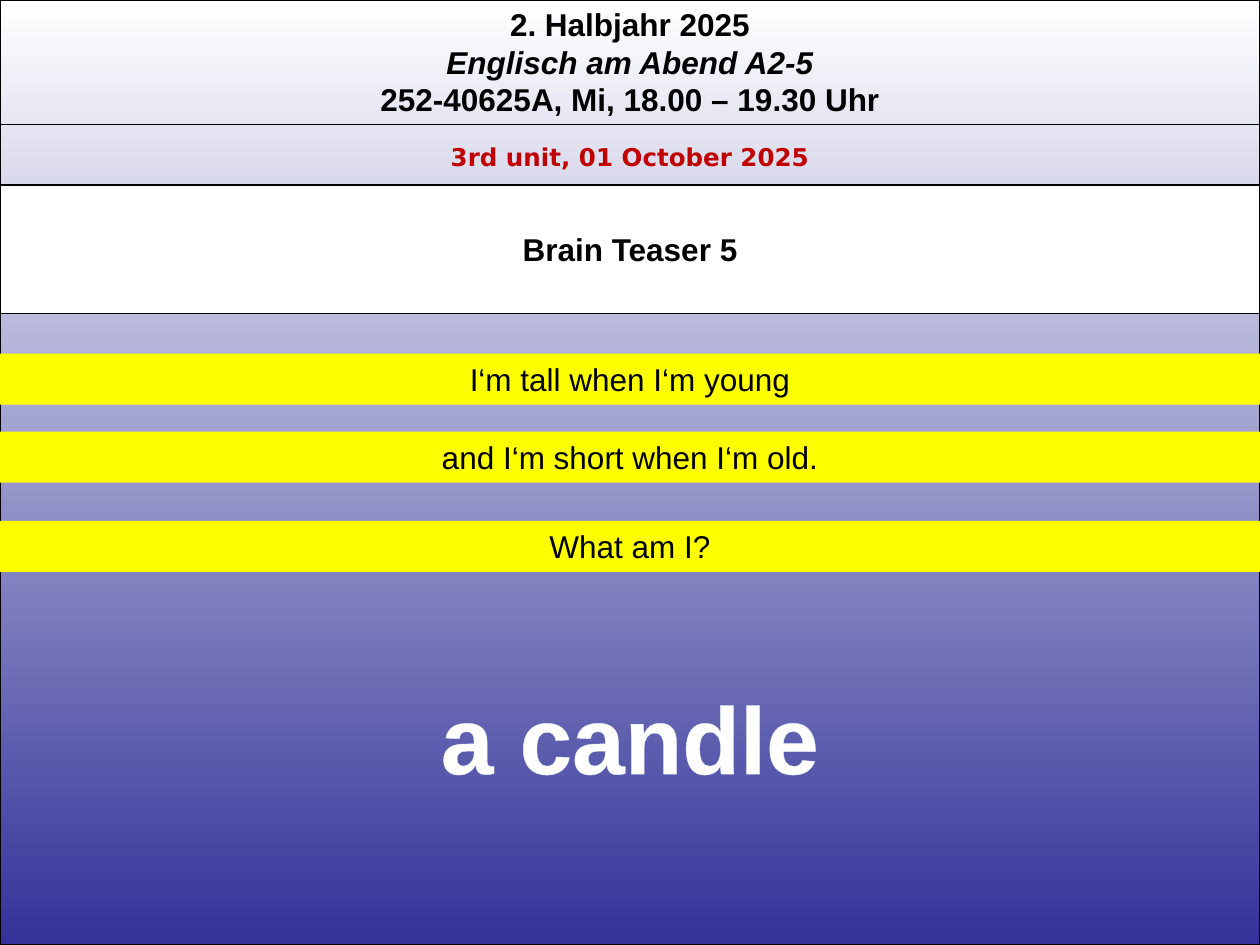
"""Build a class slide with a course header, a riddle and its answer."""
from dataclasses import dataclass

import lxml.etree
import pptx
import pptx.dml.color
import pptx.enum.shapes
import pptx.enum.text
import pptx.oxml.ns
import pptx.util
from pptx.util import Cm

COLOURS = {
    "black": "000000",
    "white": "FFFFFF",
    "indigo": "333399",
    "yellow": "FFFF00",
    "red": "C00000",
    "outline": "DAEDEF",
}
PAGE_WIDTH, PAGE_HEIGHT = 25.4, 19.05
RECTANGLE = pptx.enum.shapes.MSO_SHAPE.RECTANGLE


@dataclass
class Style:
    size: float = 18
    colour: str = "black"
    bold: bool = True
    font: str = "Arial"


@dataclass
class Band:
    text: str
    top: float


RIDDLE_STYLE = Style(bold=False)
RIDDLE_HEIGHT = 1.03
RIDDLE = [
    Band("I‘m tall when I‘m young", 7.13),
    Band("and I‘m short when I‘m old.", 8.7),
    Band("What am I?", 10.5),
]


def rgb(name: str) -> pptx.dml.color.RGBColor:
    """Return the named colour."""
    return pptx.dml.color.RGBColor.from_string(COLOURS[name])


def draw_border(shape) -> None:
    """Give a shape or connector the thin black line."""
    shape.line.color.rgb = rgb("black")
    shape.line.width = pptx.util.Pt(0.75)


def fill_solid(shape, colour: str) -> None:
    """Fill a shape with one colour."""
    shape.fill.solid()
    shape.fill.fore_color.rgb = rgb(colour)


def write(shape, lines: list[str], style: Style, wrap: bool = True) -> None:
    """Write centred lines into a shape."""
    frame = shape.text_frame
    frame.text = "\n".join(lines)
    frame.word_wrap = wrap
    frame.auto_size = pptx.enum.text.MSO_AUTO_SIZE.NONE
    frame.vertical_anchor = pptx.enum.text.MSO_ANCHOR.MIDDLE
    for para in frame.paragraphs:
        para.alignment = pptx.enum.text.PP_ALIGN.CENTER
        para.font.size = pptx.util.Pt(style.size)
        para.font.name = style.font
        para.font.bold = style.bold
        para.font.color.rgb = rgb(style.colour)


def add_text(page, top: float, height: float, lines: list[str], style: Style,
             left: float = 0, width: float = PAGE_WIDTH, wrap: bool = True):
    """Add a text box and return it."""
    box = page.shapes.add_textbox(Cm(left), Cm(top), Cm(width), Cm(height))
    write(box, lines, style, wrap)
    return box


def add_rectangle(page, top: float, height: float):
    """Add a full-width rectangle without a shadow."""
    shape = page.shapes.add_shape(RECTANGLE, 0, Cm(top), Cm(PAGE_WIDTH), Cm(height))
    shape.shadow.inherit = False
    return shape


def add_background(page) -> None:
    """Cover the page with the white to indigo gradient."""
    backdrop = add_rectangle(page, 0, PAGE_HEIGHT)
    backdrop.fill.gradient()
    backdrop.fill.gradient_angle = 270
    for stop, (colour, position) in zip(backdrop.fill.gradient_stops, [("white", 0), ("indigo", 1)]):
        stop.color.rgb = rgb(colour)
        stop.position = position
    draw_border(backdrop)


def add_header(page) -> None:
    """Add the course lines and the rule beneath them."""
    course = ["2. Halbjahr 2025", "Englisch am Abend A2-5", "252-40625A, Mi, 18.00 – 19.30 Uhr"]
    header = add_text(page, -0.03, 2.54, course, Style())
    header.text_frame.paragraphs[1].font.italic = True
    rule = page.shapes.add_connector(
        pptx.enum.shapes.MSO_CONNECTOR.STRAIGHT, 0, Cm(2.51), Cm(PAGE_WIDTH), Cm(2.51))
    draw_border(rule)
    lxml.etree.SubElement(rule.element.spPr, pptx.oxml.ns.qn("a:effectLst"))


def place_title(page) -> None:
    """Format the title and bring it in front of the background."""
    title = page.shapes.title
    title.left, title.top, title.width, title.height = 0, Cm(3.73), Cm(PAGE_WIDTH), Cm(2.59)
    fill_solid(title, "white")
    draw_border(title)
    write(title, ["Brain Teaser 5"], Style())
    title.element.getparent().append(title.element)


def add_riddle(page, band: Band) -> None:
    """Add one yellow riddle line."""
    shape = add_rectangle(page, band.top, RIDDLE_HEIGHT)
    fill_solid(shape, "yellow")
    shape.line.fill.background()
    write(shape, [band.text], RIDDLE_STYLE)


def add_answer(page) -> None:
    """Add the large outlined answer."""
    answer = add_text(page, 13.56, 2.57, ["a candle"], Style(54, "white"), 8.6, 8.2, wrap=False)
    qn = pptx.oxml.ns.qn
    for properties in answer.element.iter(qn("a:defRPr")):
        outline = lxml.etree.Element(qn("a:ln"), w=str(pptx.util.Pt(0.8)))
        fill = lxml.etree.SubElement(outline, qn("a:solidFill"))
        lxml.etree.SubElement(fill, qn("a:srgbClr"), val=COLOURS["outline"])
        properties.insert(0, outline)


def main() -> None:
    """Build and save the deck."""
    deck = pptx.Presentation()
    deck.slide_width, deck.slide_height = Cm(PAGE_WIDTH), Cm(PAGE_HEIGHT)
    page = deck.slides.add_slide(deck.slide_layouts[5])
    add_background(page)
    add_header(page)
    place_title(page)
    add_text(page, 2.72, 0.86, ["3rd unit, 01 October 2025"], Style(14, "red", font="DejaVu Sans"))
    for band in RIDDLE:
        add_riddle(page, band)
    add_answer(page)
    deck.save("out.pptx")


if __name__ == "__main__":
    main()
